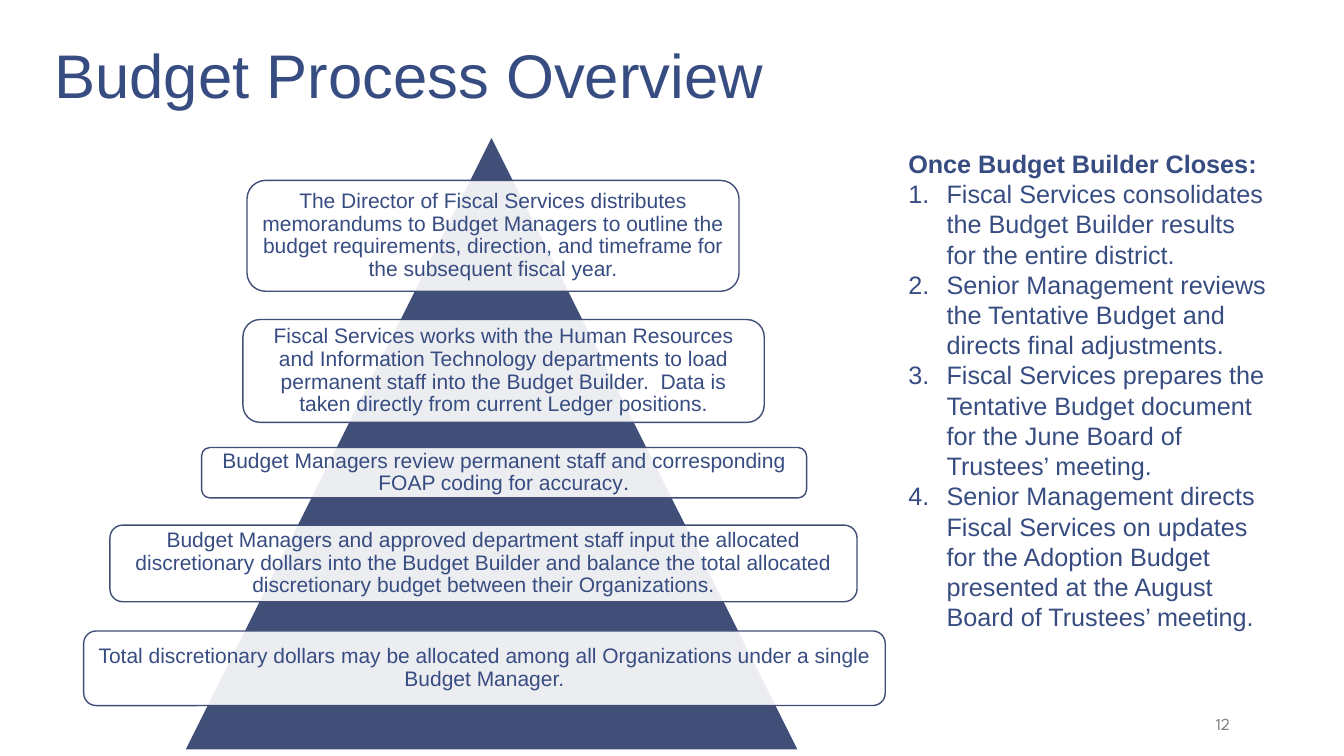
from lxml import etree
from pptx import Presentation
from pptx.dml.color import RGBColor
from pptx.enum.shapes import MSO_SHAPE
from pptx.enum.text import MSO_ANCHOR, PP_ALIGN
from pptx.oxml.ns import qn
from pptx.util import Emu, Pt

TRIANGLE = MSO_SHAPE.ISOSCELES_TRIANGLE
ROUNDED = MSO_SHAPE.ROUNDED_RECTANGLE
TOP, MIDDLE, BOTTOM = MSO_ANCHOR.TOP, MSO_ANCHOR.MIDDLE, MSO_ANCHOR.BOTTOM
LEFT, CENTER, RIGHT = PP_ALIGN.LEFT, PP_ALIGN.CENTER, PP_ALIGN.RIGHT

EMU_PER_PX = 9144
WHITE, NAVY, INK, GRAY = "FFFFFF", "414E77", "374C81", "808080"
BODY_FONT, ACCENT_FONT = "Arial", "League Spartan"

STEPS = [
    ((245, 179, 488, 110), [
        "The Director of Fiscal Services distributes memorandums to Budget Managers "
        "to outline the budget requirements, direction, and timeframe for the "
        "subsequent fiscal year."]),
    ((241, 317, 517, 102), [
        "Fiscal Services works with the Human Resources and Information Technology "
        "departments to load permanent staff into the Budget Builder.  Data is taken "
        "directly from current Ledger positions."]),
    ((200, 444, 600, 50), [
        "Budget Managers review permanent staff and corresponding FOAP coding for "
        "accuracy", (".", ACCENT_FONT)]),
    ((109, 521, 741, 76), [
        "Budget Managers and approved department staff input the allocated "
        "discretionary dollars into the Budget Builder and balance the total "
        "allocated discretionary budget between their Organizations."]),
    ((83, 626, 795, 74), [
        "Total discretionary dollars may be allocated among all Organizations under "
        "a single Budget Manager."]),
]

CLOSING_STEPS = [
    "Fiscal Services consolidates the Budget Builder results for the entire district.",
    "Senior Management reviews the Tentative Budget and directs final adjustments.",
    "Fiscal Services prepares the Tentative Budget document for the June Board of "
    "Trustees’ meeting.",
    "Senior Management directs Fiscal Services on updates for the Adoption Budget "
    "presented at the August Board of Trustees’ meeting.",
]


def px(n):
    return Emu(n * EMU_PER_PX)


def rgb(value):
    return RGBColor.from_string(value)


def add_text(tf, runs, size=15, color=INK, font=BODY_FONT, bold=False,
             align=LEFT, spacing=1.0, numbered=False, first=True):
    p = tf.paragraphs[0] if first else tf.add_paragraph()
    p.alignment = align
    p.line_spacing = spacing
    if numbered:
        pPr = p._p.get_or_add_pPr()
        pPr.set("marL", str(px(38)))
        pPr.set("indent", str(-px(38)))
        etree.SubElement(pPr, qn("a:buFont"), typeface="+mj-lt")
        etree.SubElement(pPr, qn("a:buAutoNum"), type="arabicPeriod")
    for run in runs:
        text, face = run if isinstance(run, tuple) else (run, font)
        r = p.add_run()
        r.text = text
        r.font.size = Pt(size)
        r.font.name = face
        r.font.bold = bold
        r.font.color.rgb = rgb(color)


class Deck:
    def __init__(self, width, height):
        self.prs = Presentation()
        self.prs.slide_width, self.prs.slide_height = px(width), px(height)
        self.s = self.prs.slides.add_slide(self.prs.slide_layouts[6])

    def frame(self, sp, inset_x, inset_y, anchor):
        tf = sp.text_frame
        tf.word_wrap = True
        tf.margin_left = tf.margin_right = px(inset_x)
        tf.margin_top = tf.margin_bottom = px(inset_y)
        tf.vertical_anchor = anchor
        return tf

    def shape(self, kind, box, fill, line, opacity=100):
        sp = self.s.shapes.add_shape(kind, *map(px, box))
        sp.shadow.inherit = False
        sp.fill.solid()
        sp.fill.fore_color.rgb = rgb(fill)
        if opacity < 100:
            clr = sp._element.spPr.find(qn("a:solidFill")).find(qn("a:srgbClr"))
            etree.SubElement(clr, qn("a:alpha"), val=str(opacity * 1000))
        sp.line.color.rgb = rgb(line)
        sp.line.width = Pt(1)
        return sp

    def textbox(self, box, inset_x=13, inset_y=7, anchor=BOTTOM):
        sp = self.s.shapes.add_textbox(*map(px, box))
        return self.frame(sp, inset_x, inset_y, anchor)

    def step(self, box, runs):
        sp = self.shape(ROUNDED, box, WHITE, NAVY, opacity=90)
        tf = self.frame(sp, 6, 6, MIDDLE)
        add_text(tf, runs, align=CENTER, spacing=0.9)

    def numbered_list(self, box, heading, items):
        tf = self.textbox(box, 10, 5, TOP)
        add_text(tf, [heading], size=18, bold=True)
        for item in items:
            add_text(tf, [item], size=18, numbered=True, first=False)


def main():
    deck = Deck(1333, 750)
    title = deck.textbox((41, 0, 1111, 117))
    add_text(title, ["Budget Process Overview"], size=44, spacing=0.85)
    deck.shape(TRIANGLE, (183, 135, 609, 609), NAVY, WHITE)
    for box, runs in STEPS:
        deck.step(box, runs)
    deck.numbered_list((891, 142, 375, 495), "Once Budget Builder Closes:", CLOSING_STEPS)
    number = deck.textbox((1112, 700, 121, 35))
    add_text(number, ["12"], size=12, color=GRAY, font=ACCENT_FONT, align=RIGHT)
    deck.prs.save("out.pptx")


if __name__ == "__main__":
    main()
